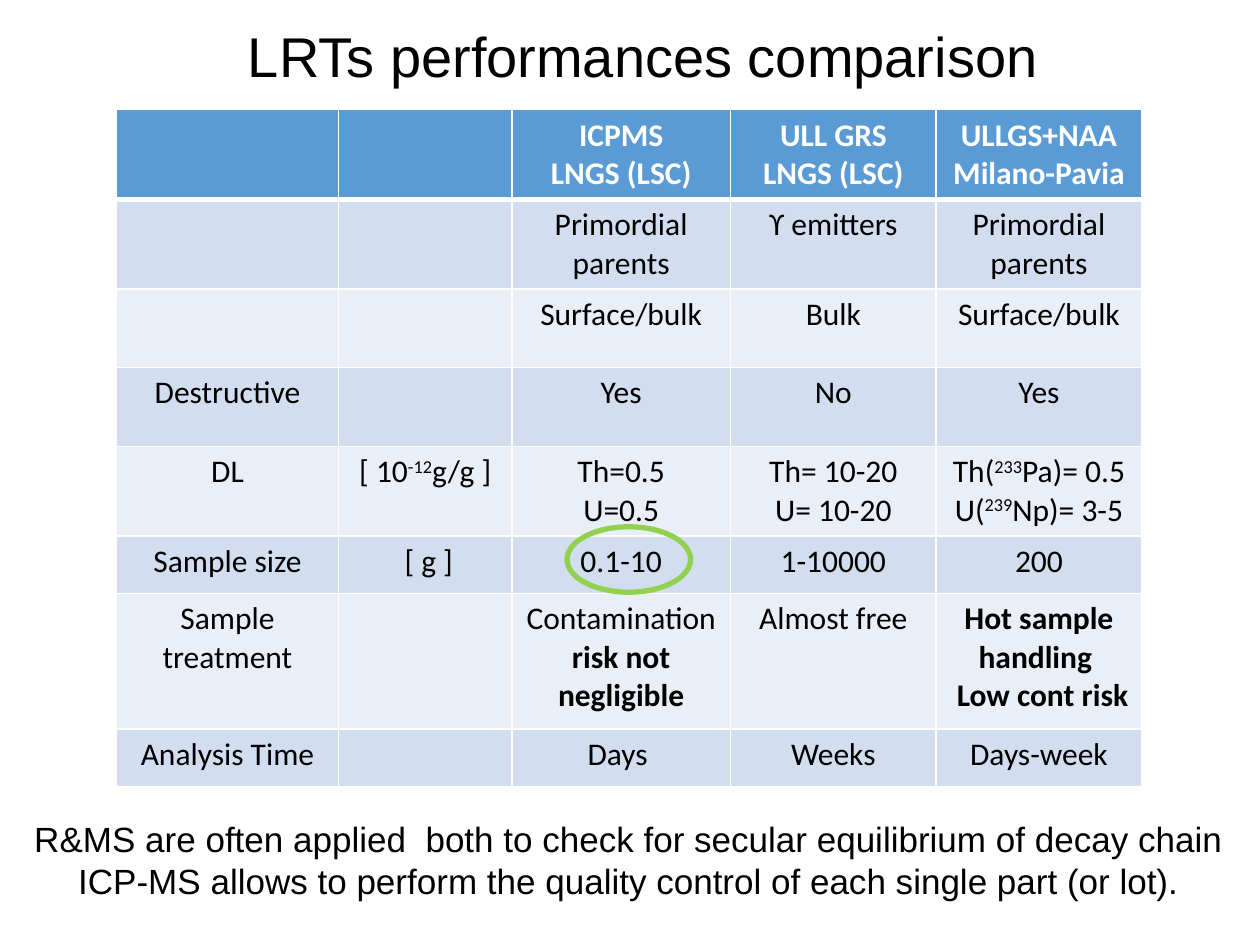
from lxml import etree
from pptx import Presentation
from pptx import util as u
from pptx.dml.color import RGBColor
from pptx.enum import shapes, text
from pptx.oxml import ns

THEME = {
    "colours": {"header": "5B9BD5", "odd": "D2DEEF", "even": "EAEFF7",
                "light": "FFFFFF", "dark": "000000", "ring": "92D050"},
    "title": {"name": "Arial", "size": u.Pt(32), "bold": False},
    "note": {"name": "Arial", "size": u.Pt(20), "bold": False},
    "cell": {"name": "Calibri", "size": u.Pt(18), "bold": False},
}
COLOURS = THEME["colours"]

TITLE = ["LRTs performances comparison"]
NOTE = ["R&MS are often applied  both to check for secular equilibrium of decay chain",
        "ICP-MS allows to perform the quality control of each single part (or lot)."]

# A cell is a list of paragraphs; a paragraph is a string or a list of (string, style).
ROWS = [
    [[], [], ["ICPMS", "LNGS (LSC)"], ["ULL GRS", "LNGS (LSC)"], ["ULLGS+NAA", "Milano-Pavia"]],
    [[], [], ["Primordial parents"], ["ϒ emitters"], ["Primordial parents"]],
    [[], [], ["Surface/bulk"], ["Bulk"], ["Surface/bulk"]],
    [["Destructive"], [], ["Yes"], ["No"], ["Yes"]],
    [["DL"], [[("[ 10", ""), ("-12", "super"), ("g/g ]", "")]],
     ["Th=0.5", "U=0.5"], ["Th= 10-20", "U= 10-20"],
     [[("Th(", ""), ("233", "super"), ("Pa)= 0.5", "")],
      [("U(", ""), ("239", "super"), ("Np)= 3-5", "")]]],
    [["Sample size"], [" [ g ]"], ["0.1-10"], ["1-10000"], ["200"]],
    [["Sample treatment"], [], [[("Contamination ", ""), ("risk not negligible", "bold")]],
     ["Almost free"],
     [[("Hot sample", "bold")], [("handling ", "bold")], [(" Low cont risk ", "bold")]]],
    [["Analysis Time"], [], ["Days "], ["Weeks"], ["Days-week"]],
]
COLUMN_WIDTHS = [127, 99, 125, 117.5, 117.5]
ROW_HEIGHTS = [51, 51, 45, 45, 51, 33, 77.5, 33]
TABLE_LEFT, TABLE_TOP = 66.5, 62.7


def colour(name):
    return RGBColor.from_string(COLOURS[name])


def write(frame, paragraphs, font, ink="dark", align=text.PP_ALIGN.CENTER):
    for index, content in enumerate(paragraphs):
        paragraph = frame.paragraphs[0] if index == 0 else frame.add_paragraph()
        paragraph.alignment = align
        for words, style in [(content, "")] if isinstance(content, str) else content:
            run = paragraph.add_run()
            run.text = words
            for key, value in font.items():
                setattr(run.font, key, value)
            run.font.color.rgb = colour(ink)
            if style == "bold":
                run.font.bold = True
            elif style == "super":
                run.font._element.set("baseline", "30000")


def add_text(slide, box, paragraphs, font, align, wrap):
    shape = slide.shapes.add_textbox(*map(u.Pt, box))
    shape.text_frame.word_wrap = wrap
    shape.text_frame.auto_size = text.MSO_AUTO_SIZE.SHAPE_TO_FIT_TEXT
    write(shape.text_frame, paragraphs, font, align=align)


def set_borders(cell, widths):
    """Draw the four cell borders; they must come before the fill in tcPr."""
    properties = cell._tc.get_or_add_tcPr()
    for position, (side, width) in enumerate(widths.items()):
        line = etree.Element(ns.qn(f"a:ln{side}"), w=str(u.Pt(width)))
        fill = etree.SubElement(line, ns.qn("a:solidFill"))
        etree.SubElement(fill, ns.qn("a:srgbClr"), val=COLOURS["light"])
        properties.insert(position, line)


def add_comparison(slide):
    box = (TABLE_LEFT, TABLE_TOP, sum(COLUMN_WIDTHS), sum(ROW_HEIGHTS))
    table = slide.shapes.add_table(len(ROWS), len(COLUMN_WIDTHS), *map(u.Pt, box)).table
    for column, width in zip(table.columns, COLUMN_WIDTHS):
        column.width = u.Pt(width)
    for index, (row, height) in enumerate(zip(ROWS, ROW_HEIGHTS)):
        table.rows[index].height = u.Pt(height)
        is_header = index == 0
        band = "header" if is_header else ("even", "odd")[index % 2]
        borders = {"L": 1, "R": 1, "T": 3 if index == 1 else 1, "B": 3 if is_header else 1}
        for cell, paragraphs in zip(table.rows[index].cells, row):
            cell.fill.solid()
            cell.fill.fore_color.rgb = colour(band)
            set_borders(cell, borders)
            write(cell.text_frame, paragraphs, {**THEME["cell"], "bold": is_header},
                  "light" if is_header else "dark")


def add_ring(slide, box):
    ring = slide.shapes.add_shape(shapes.MSO_SHAPE.OVAL, *map(u.Pt, box))
    ring.shadow.inherit = False
    ring.fill.background()
    ring.line.color.rgb = colour("ring")
    ring.line.width = u.Pt(3)


def main():
    presentation = Presentation()
    presentation.slide_width, presentation.slide_height = u.Pt(720), u.Pt(540)
    slide = presentation.slides.add_slide(presentation.slide_layouts[6])
    add_comparison(slide)
    add_text(slide, (10.8, 463.7, 697, 55.4), NOTE, THEME["note"], text.PP_ALIGN.CENTER, True)
    add_text(slide, (134.6, 8.6, 478, 46), TITLE, THEME["title"], text.PP_ALIGN.LEFT, False)
    add_ring(slide, (324, 301, 70.6, 37.4))
    presentation.save("out.pptx")


if __name__ == "__main__":
    main()
